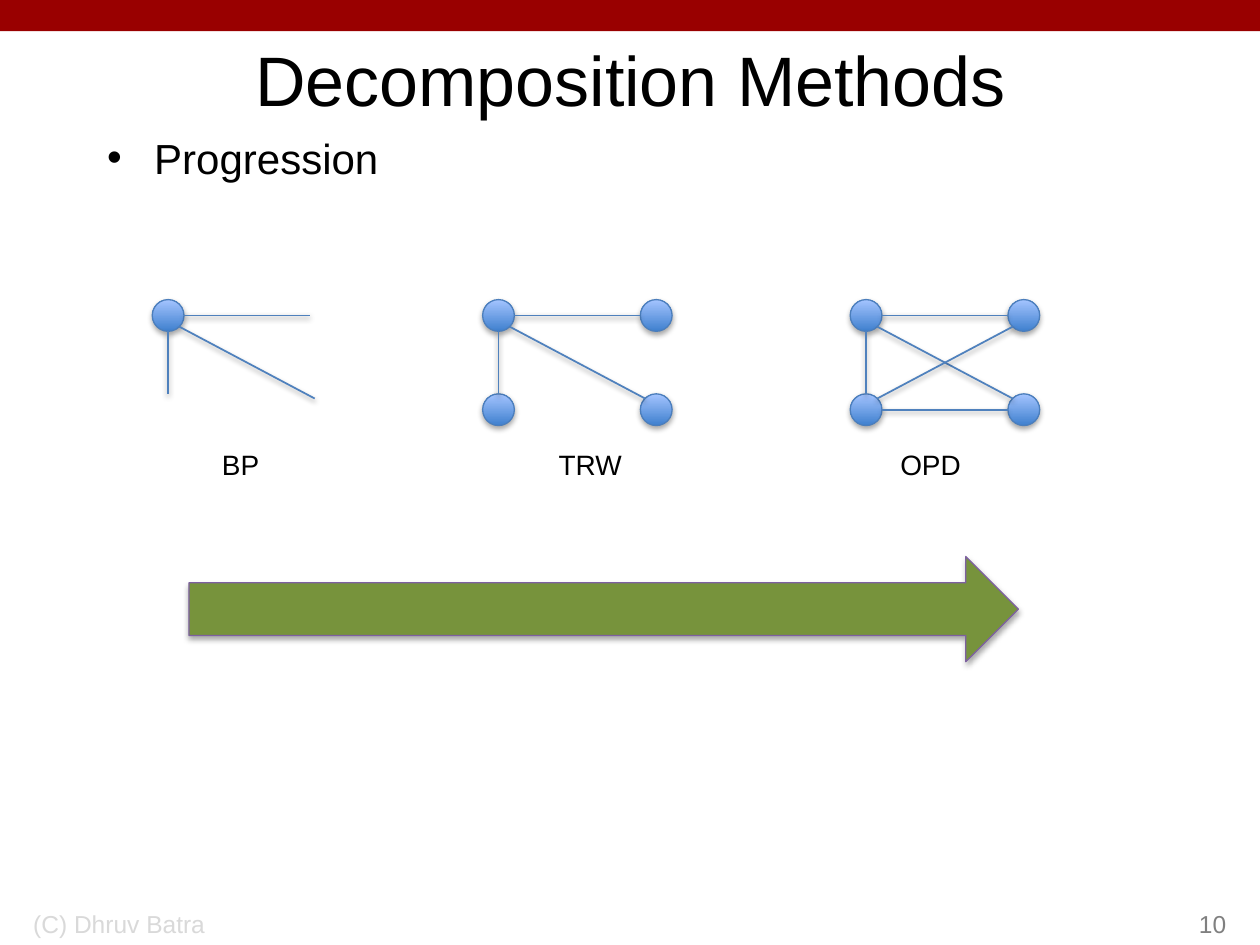
"""Build the slide on the progression of decomposition methods."""
from math import hypot

from lxml import etree
from pptx import Presentation
from pptx.dml.color import RGBColor
from pptx.enum.shapes import MSO_CONNECTOR, MSO_SHAPE
from pptx.enum.text import MSO_ANCHOR, PP_ALIGN
from pptx.oxml.ns import qn
from pptx.util import Cm, Pt

RECT, OVAL, ARROW = MSO_SHAPE.RECTANGLE, MSO_SHAPE.OVAL, MSO_SHAPE.RIGHT_ARROW
LINE = MSO_CONNECTOR.STRAIGHT
LEFT, MID, RIGHT = PP_ALIGN.LEFT, PP_ALIGN.CENTER, PP_ALIGN.RIGHT
TOP, CENTER, BASE = MSO_ANCHOR.TOP, MSO_ANCHOR.MIDDLE, MSO_ANCHOR.BOTTOM

BLACK = RGBColor(0x00, 0x00, 0x00)
RED = RGBColor(0x99, 0x00, 0x00)
PALE = RGBColor(0xD9, 0xD9, 0xD9)
GRAY = RGBColor(0x80, 0x80, 0x80)
DEEP = RGBColor(0x3F, 0x80, 0xCE)
LIGHT = RGBColor(0xA4, 0xC4, 0xFF)
RIM = RGBColor(0x4B, 0x7E, 0xBC)
BLUE = RGBColor(0x4F, 0x81, 0xBD)
GREEN = RGBColor(0x77, 0x93, 0x3C)
PURPLE = RGBColor(0x7D, 0x60, 0xA0)

TEXTS = [
    ("Decomposition Methods", (1.91, 0.64, 21.59, 1.9), 40, BLACK, MID, CENTER),
    ("Progression", (1.91, 2.54, 21.59, 15.24), 24, BLACK, LEFT, TOP),
    ("(C) Dhruv Batra", (0.42, 17.78, 8.05, 1.27), 14, PALE, LEFT, BASE),
    ("10", (19.69, 17.78, 5.28, 1.27), 14, GRAY, RIGHT, BASE),
]
NW, NE, SW, SE = (0, 0), (1, 0), (0, 1), (1, 1)
STAR = [(NW, NE), (NW, SE), (NW, SW)]
GRAPHS = [
    ("BP", 3.39, 4.85, [NW], STAR),
    ("TRW", 10.05, 11.9, [NW, NE, SW, SE], STAR),
    ("OPD", 17.46, 18.76, [NW, NE, SW, SE], STAR + [(SW, SE), (NE, SW)]),
]
ROW, STEP_X, STEP_Y, RAD = 6.36, 3.18, 1.9, 0.32
TAG_TOP, TAG_W, TAG_H = 8.89, 1.8, 0.94


def shade(shape, dist, alpha):
    """Give a shape or connector a soft shadow below it."""
    props = shape._element.spPr
    for old in props.findall(qn("a:effectLst")):
        props.remove(old)
    list_ = etree.SubElement(props, qn("a:effectLst"))
    drop = etree.SubElement(list_, qn("a:outerShdw"), blurRad="40000",
                            dist=str(dist), dir="5400000", rotWithShape="0")
    tint = etree.SubElement(drop, qn("a:srgbClr"), val="000000")
    etree.SubElement(tint, qn("a:alpha"), val=str(alpha * 1000))


def add_text(slide, text, box, size, color, align, anchor, wrap=True):
    """Add a text box and return its paragraph."""
    frame = slide.shapes.add_textbox(*map(Cm, box)).text_frame
    frame.word_wrap = wrap
    frame.vertical_anchor = anchor
    para = frame.paragraphs[0]
    para.text = text
    para.alignment = align
    return para, size, color


def set_font(para, size, color):
    """Set the font of a paragraph."""
    para.font.name = "Arial"
    para.font.size = Pt(size)
    para.font.color.rgb = color


def add_dot(slide, x, y):
    """Add a graph node centred on a point."""
    dot = slide.shapes.add_shape(
        OVAL, Cm(x - RAD), Cm(y - RAD), Cm(2 * RAD), Cm(2 * RAD))
    dot.fill.gradient()
    dot.fill.gradient_angle = 90
    for stop, color, pos in zip(dot.fill.gradient_stops, (DEEP, LIGHT), (0, 1)):
        stop.color.rgb = color
        stop.position = pos
    dot.line.color.rgb = RIM
    dot.line.width = Pt(0.75)
    shade(dot, 23000, 35)


def add_edge(slide, start, end):
    """Join the rims of two nodes, at 45 degrees for a diagonal."""
    signs = [(b > a) - (b < a) for a, b in zip(start, end)]
    trim = [RAD * s / hypot(*signs) for s in signs]
    ends = [a + t for a, t in zip(start, trim)]
    ends += [b - t for b, t in zip(end, trim)]
    edge = slide.shapes.add_connector(LINE, *map(Cm, ends))
    edge.line.color.rgb = BLUE
    edge.line.width = Pt(1)
    shade(edge, 20000, 38)


def add_graph(slide, name, left, mid, nodes, edges):
    """Add one graph with its label."""
    def spot(node):
        return left + node[0] * STEP_X, ROW + node[1] * STEP_Y

    for node in nodes:
        add_dot(slide, *spot(node))
    for start, end in edges:
        add_edge(slide, spot(start), spot(end))
    box = (mid - TAG_W / 2, TAG_TOP, TAG_W, TAG_H)
    set_font(*add_text(slide, name, box, 16, BLACK, MID, TOP, False))


def main():
    """Build and save the slide."""
    deck = Presentation()
    deck.slide_width, deck.slide_height = Cm(25.4), Cm(19.05)
    slide = deck.slides.add_slide(deck.slide_layouts[6])

    band = slide.shapes.add_shape(RECT, 0, 0, deck.slide_width, Cm(0.63))
    band.shadow.inherit = False
    band.fill.solid()
    band.fill.fore_color.rgb = RED
    band.line.fill.background()

    for item in TEXTS:
        para, size, color = add_text(slide, *item)
        if item[0] == "Progression":
            props = para._p.get_or_add_pPr()
            props.set("marL", str(Cm(0.95)))
            props.set("indent", str(-Cm(0.95)))
            etree.SubElement(props, qn("a:buFont"), typeface="Arial")
            etree.SubElement(props, qn("a:buChar"), char="•")
        set_font(para, size, color)

    for graph in GRAPHS:
        add_graph(slide, *graph)

    arrow = slide.shapes.add_shape(ARROW, Cm(3.81), Cm(11.22), Cm(16.72), Cm(2.12))
    arrow.fill.solid()
    arrow.fill.fore_color.rgb = GREEN
    arrow.line.color.rgb = PURPLE
    arrow.line.width = Pt(0.75)
    shade(arrow, 23000, 35)

    deck.save("out.pptx")


if __name__ == "__main__":
    main()
